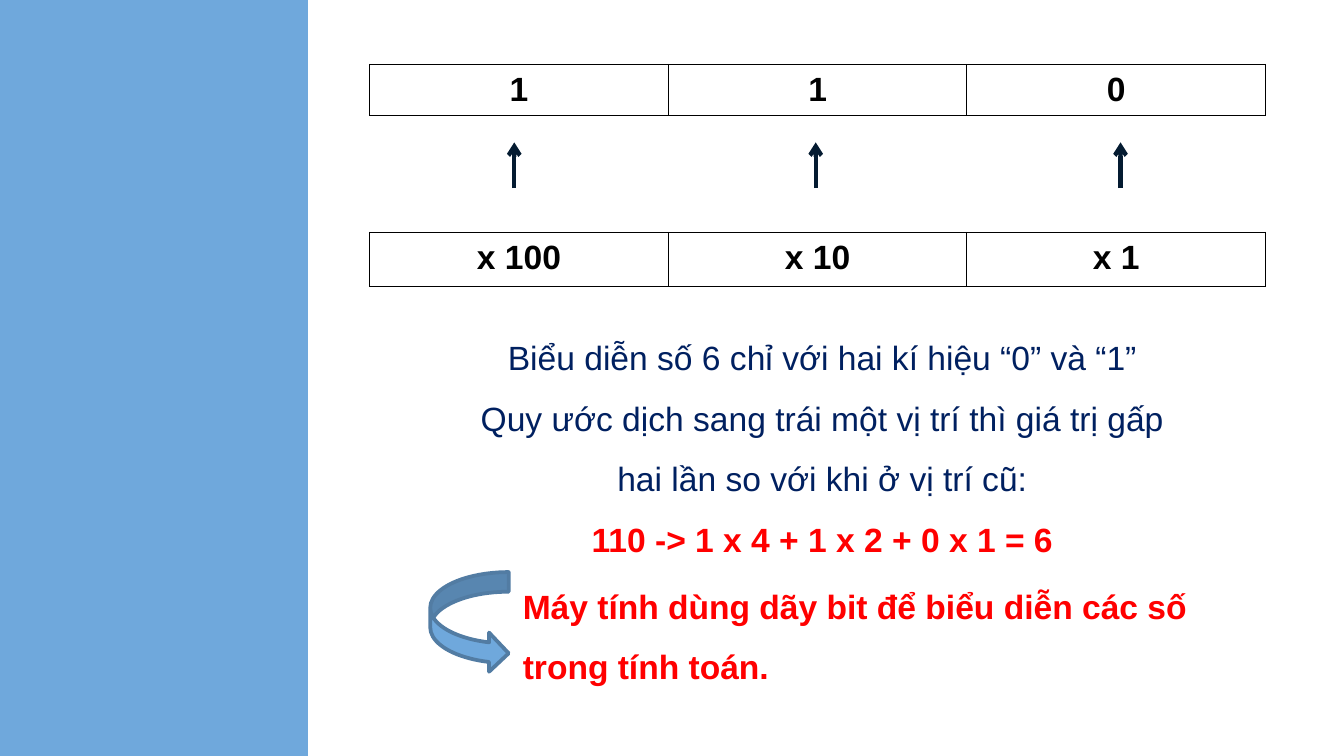
from pptx import Presentation
from pptx.dml.color import RGBColor
from pptx.enum.shapes import MSO_CONNECTOR, MSO_SHAPE
from pptx.enum.text import PP_ALIGN
from pptx.oxml import parse_xml
from pptx.oxml.ns import nsdecls
from pptx.util import Pt

COLORS = {
    "blue": "6FA8DC",
    "edge": "527CA3",
    "white": "FFFFFF",
    "black": "000000",
    "arrow": "041B31",
    "navy": "002060",
    "red": "FF0000",
}
PLAIN = {"name": "Arial", "size": Pt(18), "bold": False}
STRONG = {**PLAIN, "bold": True}


def color(name):
    return RGBColor.from_string(COLORS[name])


def write(para, text, style, tint, align, spacing=None):
    para.alignment = align
    para.line_spacing = spacing
    span = para.add_run()
    span.text = text
    for key, value in style.items():
        setattr(span.font, key, value)
    span.font.color.rgb = color(tint)


def add_panel(page, box):
    panel = page.shapes.add_shape(MSO_SHAPE.RECTANGLE, *map(Pt, box))
    panel.shadow.inherit = False
    panel.fill.solid()
    panel.fill.fore_color.rgb = color("white")
    panel.line.fill.background()


def add_digit_table(page, box, labels):
    table = page.shapes.add_table(1, len(labels), *map(Pt, box)).table
    table.first_row = False
    table.horz_banding = False
    for cell, label in zip(table.iter_cells(), labels):
        write(cell.text_frame.paragraphs[0], label, STRONG, "black", PP_ALIGN.CENTER)
        properties = cell._tc.get_or_add_tcPr()
        for side in ("lnL", "lnR", "lnT", "lnB"):
            properties.append(parse_xml(
                f'<a:{side} {nsdecls("a")} w="{Pt(0.75)}"><a:solidFill>'
                f'<a:srgbClr val="{COLORS["black"]}"/></a:solidFill></a:{side}>'))
        cell.fill.background()


def add_up_arrows(page, box, centers):
    left, top, width, height = box
    for center in centers:
        x = Pt(left + center)
        arrow = page.shapes.add_connector(
            MSO_CONNECTOR.STRAIGHT, x, Pt(top + height), x, Pt(top))
        arrow.line.color.rgb = color("arrow")
        arrow.line.width = Pt(2.25)
        arrow.line._get_or_add_ln().append(
            parse_xml(f'<a:tailEnd {nsdecls("a")} type="arrow"/>'))
        arrow._element.spPr.append(parse_xml(f'<a:effectLst {nsdecls("a")}/>'))


def add_text(page, box, lines, align):
    frame = page.shapes.add_textbox(*map(Pt, box)).text_frame
    frame.word_wrap = True
    for index, (text, style, tint) in enumerate(lines):
        para = frame.add_paragraph() if index else frame.paragraphs[0]
        write(para, text, style, tint, align, 1.5)


def add_conclusion(page, box, text):
    left, top, width, height = box
    arrow_width = 42
    arrow = page.shapes.add_shape(
        MSO_SHAPE.CURVED_RIGHT_ARROW, Pt(left), Pt(top + 7), Pt(arrow_width), Pt(54))
    arrow.shadow.inherit = False
    arrow.fill.solid()
    arrow.fill.fore_color.rgb = color("blue")
    arrow.line.color.rgb = color("edge")
    arrow.line.width = Pt(2)
    text_box = (left + arrow_width + 0.5, top, width - arrow_width - 0.5, height)
    add_text(page, text_box, [(text, STRONG, "red")], PP_ALIGN.LEFT)


def build_number_slide(deck):
    page = deck.slides.add_slide(deck.slide_layouts[6])
    page.background.fill.solid()
    page.background.fill.fore_color.rgb = color("blue")
    add_panel(page, (165, 0, 555, 405))
    add_digit_table(page, (198, 34.5, 480, 27), ("1", "1", "0"))
    add_up_arrows(page, (198, 76.3, 480, 24.5), (77.5, 239, 402.3))
    add_digit_table(page, (198, 124.5, 480, 29), ("x 100", "x 10", "x 1"))
    add_text(page, (230.5, 166.3, 420, 138), [
        ("Biểu diễn số 6 chỉ với hai kí hiệu “0” và “1”", PLAIN, "navy"),
        ("Quy ước dịch sang trái một vị trí thì giá trị gấp", PLAIN, "navy"),
        ("hai lần so với khi ở vị trí cũ:", PLAIN, "navy"),
        ("110 -> 1 x 4 + 1 x 2 + 0 x 1 = 6", STRONG, "red"),
    ], PP_ALIGN.CENTER)
    add_conclusion(page, (230.5, 299.5, 427, 68.5),
                   "Máy tính dùng dãy bit để biểu diễn các số trong tính toán.")


def main():
    deck = Presentation()
    deck.slide_width = Pt(720)
    deck.slide_height = Pt(405)
    build_number_slide(deck)
    deck.save("out.pptx")


if __name__ == "__main__":
    main()
